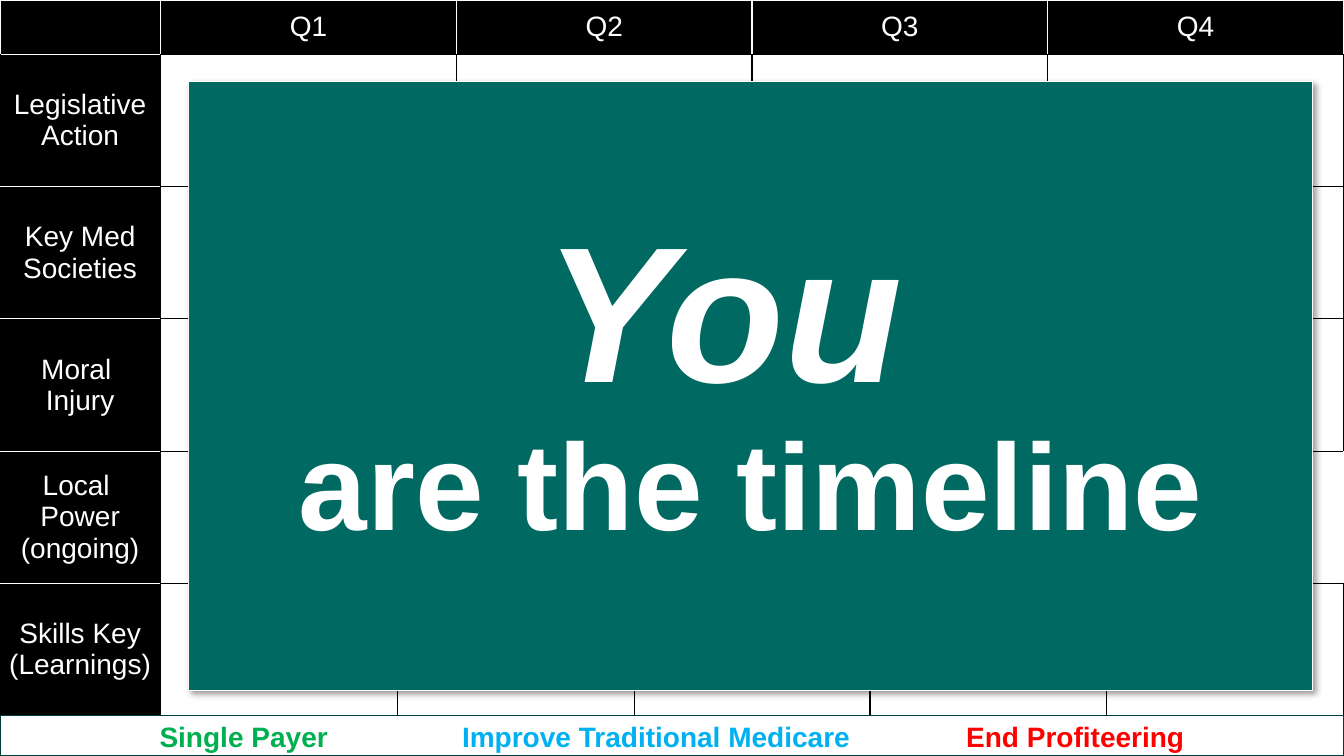
from lxml import etree
from pptx import Presentation
from pptx import util as u
from pptx.dml.color import RGBColor
from pptx.enum import shapes, text
from pptx.oxml import ns, parse_xml

BLACK, WHITE, TEAL = "000000", "FFFFFF", "006961"
HEAD, FOOT = 0.54, 0.4
NS = ns.nsdecls("a")


def rgb(code):
    return RGBColor.from_string(code)


def write(para, size, color=WHITE, bold=False):
    para.alignment = text.PP_ALIGN.CENTER
    font = para.font
    font.name, font.size, font.bold = "Arial", u.Pt(size), bold
    font.color.rgb = rgb(color)


deck = Presentation()
deck.slide_width, deck.slide_height = u.Inches(13.33), u.Inches(7.5)
slide = deck.slides.add_slide(deck.slide_layouts[6])

# Timeline grid: mirrored column widths, one header row, equal rows below
labels = ["", "Legislative\nAction", "Key Med Societies", "Moral \nInjury",
          "Local \nPower (ongoing)", "Skills Key (Learnings)"]
half = [2.35, 0.59, 1.76, 1.17]
widths = [1.59] + half + half[::-1]
body = 7.5 - FOOT
heights = [HEAD] + [(body - HEAD) / 5] * 5
grid = slide.shapes.add_table(len(heights), len(widths), 0, 0,
                              deck.slide_width, u.Inches(body)).table
grid.first_row = grid.horz_banding = False
for col, width in zip(grid.columns, widths):
    col.width = u.Inches(width)
for row, height in zip(grid.rows, heights):
    row.height = u.Inches(height)

# Merged spans in each row
pairs = [(1, 2), (3, 4), (5, 6), (7, 8)]
spans = [pairs] * 4 + [[(1, 8)], [(2, 3), (4, 5), (6, 7)]]
for r, row in enumerate(spans):
    for first, last in row:
        grid.cell(r, first).merge(grid.cell(r, last))

# Cell borders, fills and text
for r, label in enumerate(labels):
    for c in range(len(widths)):
        cell = grid.cell(r, c)
        edges = dict.fromkeys("LRTB", BLACK)
        if r == 0:
            edges = dict.fromkeys("LRT", WHITE) | {"B": BLACK if c else WHITE}
        elif c == 0:
            edges["T"] = edges["B"] = WHITE
        elif r == 4:
            edges["R"] = WHITE
        props = cell._tc.get_or_add_tcPr()
        for side, color in edges.items():
            props.append(parse_xml(
                f'<a:ln{side} {NS} w="12700"><a:solidFill>'
                f'<a:srgbClr val="{color}"/></a:solidFill></a:ln{side}>'))
        cell.fill.solid()
        cell.fill.fore_color.rgb = rgb(WHITE if r and c else BLACK)
        cell.vertical_anchor = text.MSO_ANCHOR.MIDDLE
        if r and c == 0:
            cell.margin_left = cell.margin_right = 0
            cell.text = label
        elif r == 0 and c % 2:
            cell.text = f"Q{c // 2 + 1}"
        if cell.text:
            for para in cell.text_frame.paragraphs:
                write(para, 20)

# Goals strip and headline panel
boxes = []
for place, fill, line in [((0, body, 13.33, FOOT), WHITE, "003D39"),
                          ((1.87, 0.81, 11.15, 6.04), TEAL, WHITE)]:
    box = slide.shapes.add_shape(shapes.MSO_SHAPE.RECTANGLE,
                                 *[u.Inches(n) for n in place])
    box.shadow.inherit = False
    box.fill.solid()
    box.fill.fore_color.rgb = rgb(fill)
    box.line.color.rgb, box.line.width = rgb(line), u.Pt(1)
    box.text_frame.vertical_anchor = text.MSO_ANCHOR.MIDDLE
    boxes.append(box)
strip, panel = boxes

# Goals, set apart by tab stops
para = strip.text_frame.paragraphs[0]
tabs = etree.SubElement(para._p.get_or_add_pPr(), ns.qn("a:tabLst"))
for stop in (3, 8):
    etree.SubElement(tabs, ns.qn("a:tab"), pos=str(u.Inches(stop)), algn="l")
write(para, 20, bold=True)
for goal, color in [("Single Payer", "00B050"),
                    ("\tImprove Traditional Medicare", "00B0F0"),
                    ("\tEnd Profiteering", "FF0000")]:
    run = para.add_run()
    run.text = goal
    run.font.color.rgb = rgb(color)

# Headline
panel.text_frame.text = "You \nare the timeline"
for para, size in zip(panel.text_frame.paragraphs, (138, 88)):
    write(para, size, bold=True)
    para.line_spacing = 0.9
panel.text_frame.paragraphs[0].font.italic = True

# Soft shadow under the panel
glow = panel._element.spPr.find(ns.qn("a:effectLst"))
glow.append(parse_xml(
    f'<a:outerShdw {NS} blurRad="{u.Pt(4)}" dist="{u.Pt(3)}" dir="2700000" '
    f'algn="tl" rotWithShape="0"><a:srgbClr val="{BLACK}">'
    '<a:alpha val="40000"/></a:srgbClr></a:outerShdw>'))

deck.save("out.pptx")
